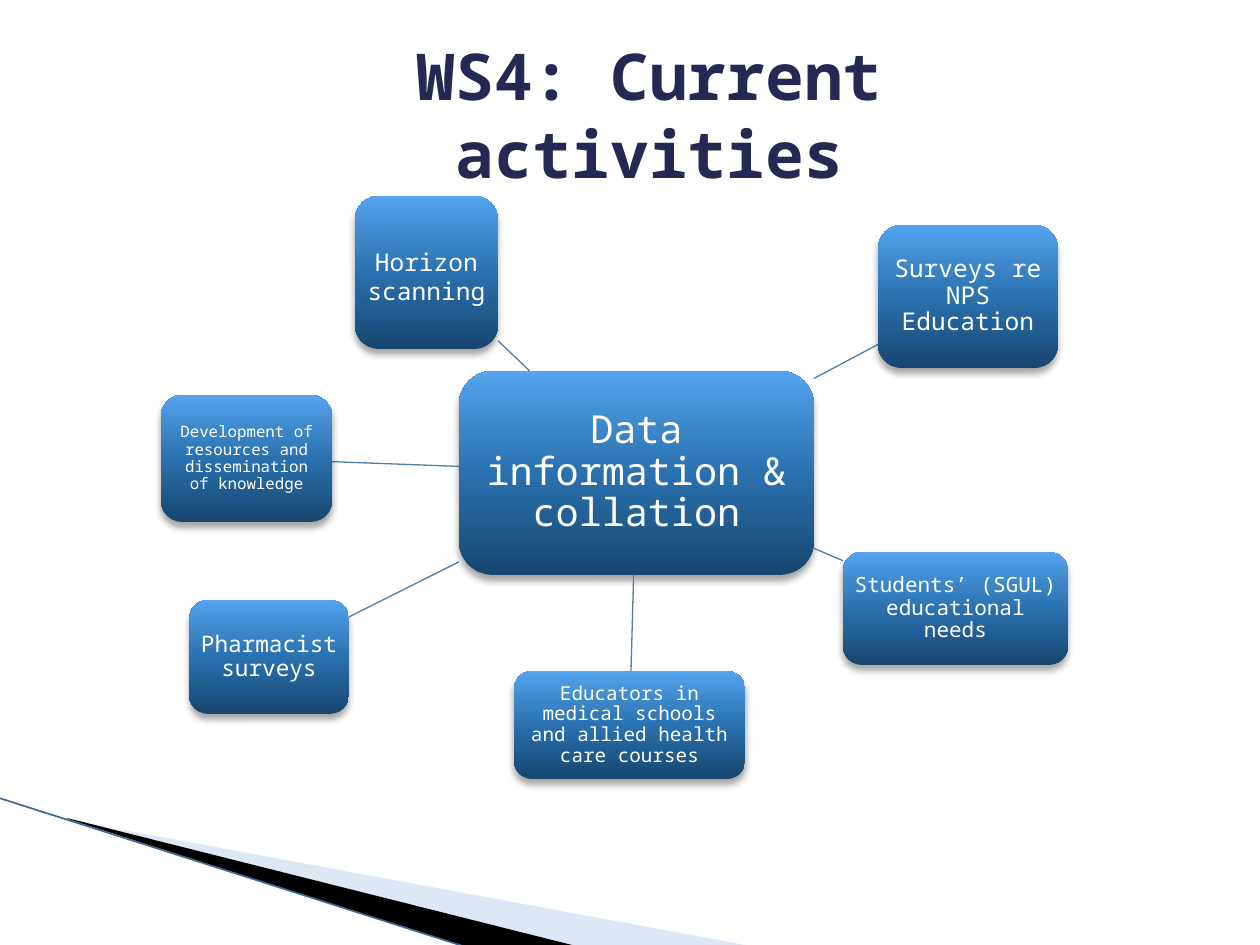
from lxml.etree import SubElement
from pptx import Presentation
from pptx.dml.color import RGBColor
from pptx.enum.shapes import MSO_CONNECTOR, MSO_SHAPE
from pptx.enum.text import MSO_ANCHOR, PP_ALIGN
from pptx.oxml import parse_xml
from pptx.oxml.ns import nsdecls, qn
from pptx.util import Emu, Inches, Pt

FONT = "Noto Sans Mono"
NAVY = RGBColor(0x24, 0x28, 0x52)
WHITE = RGBColor(0xFF, 0xFF, 0xFF)
BLACK = RGBColor(0, 0, 0)
WASH = RGBColor(0xAB, 0xC6, 0xE6)
EDGE = RGBColor(0x3B, 0x6A, 0x94)
SPOKE = RGBColor(0x4E, 0x7E, 0xA7)
GRADIENT = [(0, RGBColor(0x17, 0x46, 0x6F)), (50, RGBColor(0x2A, 0x71, 0xAF)),
            (70, RGBColor(0x3B, 0x85, 0xC6)), (100, RGBColor(0x55, 0xA4, 0xEF))]

TITLE = "WS4: Current activities"
TITLE_BOX = (316, 34, 667, 159)
# box, inset, runs of (text, size)
HUB = ((459, 371, 355, 204), 8, [("Data information & collation", 22)])
NODES = [
    ((355, 196, 143, 153), 5, [("Horizon", 14), (" ", 21), ("scanning", 14)]),
    ((878, 225, 180, 143), 5, [("Surveys re NPS Education", 14)]),
    ((843, 552, 225, 113), 4, [("Students’ (SGUL) educational needs", 12)]),
    ((514, 671, 231, 108), 4,
     [("Educators in medical schools and allied health care courses", 11)]),
    ((189, 600, 160, 114), 5, [("Pharmacist surveys", 13)]),
    ((161, 395, 171, 127), 4,
     [("Development of resources and dissemination of knowledge", 9)]),
]
SWOOSHES = [
    ([(69, 820), (750, 946), (575, 946), (69, 819)], WASH, 40),
    ([(67, 818), (576, 946), (469, 948), (68, 819)], BLACK, 100),
]
EDGE_LINE = ((-1, 798), (469, 948))


def px(n):
    return Emu(round(n * 914400 / 126))


def add_line(s, start, end, color, width):
    line = s.shapes.add_connector(MSO_CONNECTOR.STRAIGHT, *map(px, (*start, *end)))
    line.line.color.rgb, line.line.width = color, Pt(width)
    SubElement(line._element.spPr, qn("a:effectLst"))


def add_swoosh(s, points, color, alpha):
    builder = s.shapes.build_freeform(*points[0], scale=914400 / 126)
    builder.add_line_segments(points[1:], close=True)
    sp = builder.convert_to_shape()
    sp.shadow.inherit = False
    sp.line.fill.background()
    sp.fill.solid()
    sp.fill.fore_color.rgb = color
    SubElement(sp._element.spPr.find(".//" + qn("a:srgbClr")), qn("a:alpha"),
               val=str(alpha * 1000))


def add_text(sp, runs, color, bold=False):
    tf = sp.text_frame
    tf.word_wrap, tf.vertical_anchor = True, MSO_ANCHOR.MIDDLE
    p = tf.paragraphs[0]
    p.alignment = PP_ALIGN.CENTER
    for text, size in runs:
        r = p.add_run()
        r.text = text
        r.font.name, r.font.size, r.font.bold = FONT, Pt(size), bold
        r.font.color.rgb = color
    return tf


def add_node(s, box, inset, runs):
    sp = s.shapes.add_shape(MSO_SHAPE.ROUNDED_RECTANGLE, *map(px, box))
    sp.line.fill.background()
    stops = "".join(f'<a:gs pos="{pos * 1000}"><a:srgbClr val="{color}"/></a:gs>'
                    for pos, color in GRADIENT)
    sp._element.spPr.find(qn("a:prstGeom")).addnext(parse_xml(
        f'<a:gradFill {nsdecls("a")} rotWithShape="1"><a:gsLst>{stops}</a:gsLst>'
        '<a:lin ang="16200000" scaled="0"/></a:gradFill>'))
    sp._element.spPr.append(parse_xml(
        f'<a:effectLst {nsdecls("a")}><a:outerShdw blurRad="{Pt(4)}" dist="{Pt(3)}" '
        'dir="5400000" rotWithShape="0"><a:srgbClr val="000000">'
        '<a:alpha val="35000"/></a:srgbClr></a:outerShdw></a:effectLst>'))
    tf = add_text(sp, runs, WHITE)
    tf.margin_left = tf.margin_right = tf.margin_top = tf.margin_bottom = px(inset)
    tf.paragraphs[0].line_spacing = 0.9


def center(box):
    x, y, w, h = box
    return x + w / 2, y + h / 2


def edge_point(box, target):
    (cx, cy), (tx, ty) = center(box), target
    dx, dy = tx - cx, ty - cy
    t = 1 / max(abs(dx) * 2 / box[2], abs(dy) * 2 / box[3])
    return cx + dx * t, cy + dy * t


def main():
    """Build the hub-and-spoke slide of current activities."""
    prs = Presentation()
    prs.slide_width, prs.slide_height = Inches(10), Inches(7.5)
    s = prs.slides.add_slide(prs.slide_layouts[6])
    for swoosh in SWOOSHES:
        add_swoosh(s, *swoosh)
    add_line(s, *EDGE_LINE, EDGE, 0.95)
    add_text(s.shapes.add_textbox(*map(px, TITLE_BOX)), [(TITLE, 36.9)], NAVY, True)
    add_node(s, *HUB)
    for node in NODES:
        add_line(s, edge_point(HUB[0], center(node[0])),
                 edge_point(node[0], center(HUB[0])), SPOKE, 0.75)
        add_node(s, *node)
    prs.save("out.pptx")


if __name__ == "__main__":
    main()
